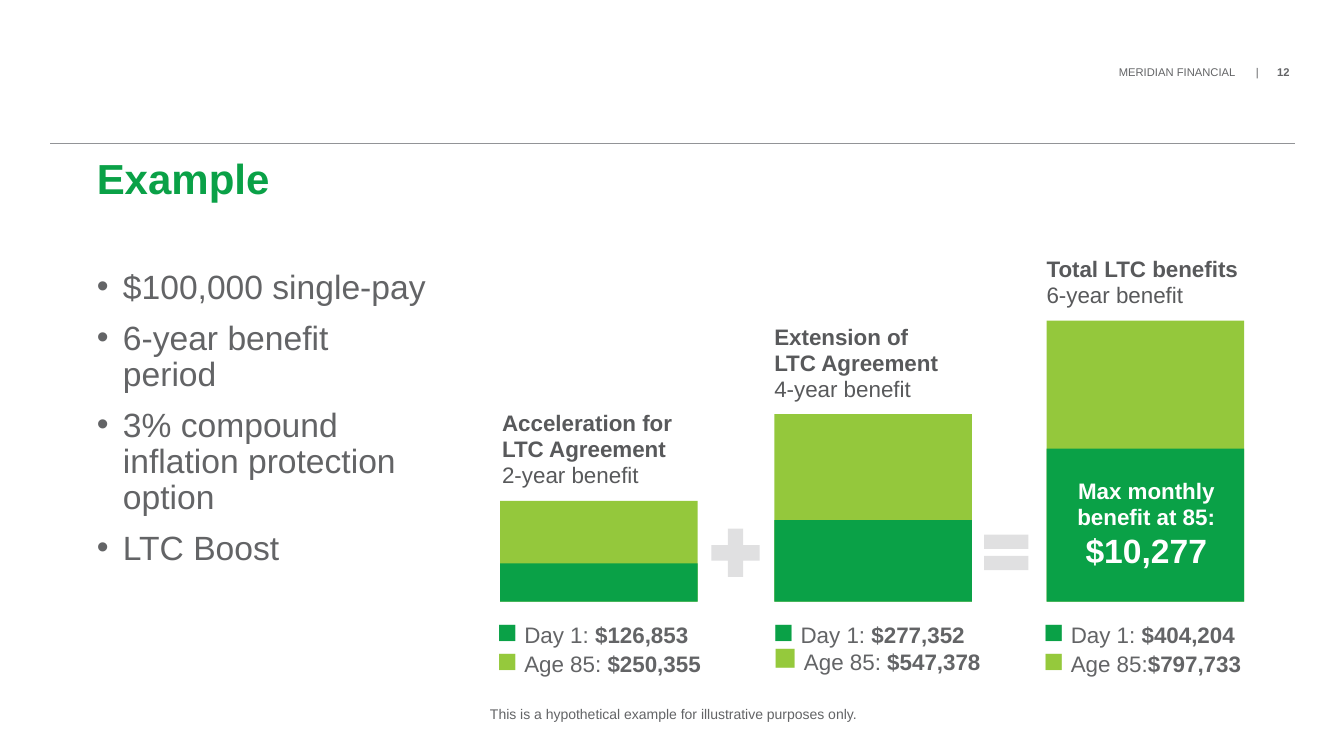
from lxml import etree
from pptx import Presentation
from pptx import util as u
from pptx.dml.color import RGBColor
from pptx.enum import shapes, text
from pptx.oxml.ns import qn

COLORS = {
    "dark": "0AA147", "light": "94C83C", "square": "95C93C", "sign": "E0E0E1",
    "body": "636466", "label": "58595B", "rule": "929497", "white": "FFFFFF",
}
SLIDE_WIDTH, SLIDE_HEIGHT = u.Inches(13.33), u.Inches(7.5)
BAR_WIDTH, BAR_BASE = 14.7, 79.6
BULLETS = ["$100,000 single-pay", "6-year benefit period",
           "3% compound inflation protection option", "LTC Boost"]
BENEFITS = [
    {"left": 37.21, "light": 13.33, "dark": 5.07, "legend": 36.98, "square": 24,
     "name": ["Acceleration for", "LTC Agreement"], "term": "2-year benefit",
     "label": 37.36, "day": "$126,853", "age": ["Age 85: ", "$250,355"]},
    {"left": 57.61, "light": 24.8, "dark": 10.8, "legend": 57.54, "square": 28,
     "name": ["Extension of", "LTC Agreement"], "term": "4-year benefit",
     "label": 57.61, "day": "$277,352", "age": ["Age 85: ", "$547,378"]},
    {"left": 77.87, "light": 37.2, "dark": 20.27, "legend": 77.64, "square": 24,
     "name": ["Total LTC benefits"], "term": "6-year benefit",
     "label": 77.87, "day": "$404,204", "age": ["Age 85:", "$797,733"]},
]


def measure(box):
    """Turn a box in percent of the slide into slide lengths."""
    left, top, width, height = box
    return (int(SLIDE_WIDTH * left / 100), int(SLIDE_HEIGHT * top / 100),
            int(SLIDE_WIDTH * width / 100), int(SLIDE_HEIGHT * height / 100))


def style(font, size=None, color=None, bold=None):
    """Set the face, and any given size, colour and weight."""
    font.name = "Arial"
    if size:
        font.size = u.Pt(size)
    if color:
        font.color.rgb = RGBColor.from_string(COLORS[color])
    if bold is not None:
        font.bold = bold


def prepare(frame):
    """Strip the margins of a text frame and wrap it from the top."""
    frame.margin_left = frame.margin_top = 0
    frame.margin_right = frame.margin_bottom = 0
    frame.auto_size = text.MSO_AUTO_SIZE.NONE
    frame.vertical_anchor = text.MSO_ANCHOR.TOP
    frame.word_wrap = True
    return frame


def add_text(page, box):
    """Add an empty text box and return its frame."""
    return prepare(page.shapes.add_textbox(*measure(box)).text_frame)


def next_paragraph(frame, first, spacing=None):
    """Return the first or a new paragraph with fixed line spacing."""
    para = frame.paragraphs[0] if first else frame.add_paragraph()
    if spacing:
        para.line_spacing = u.Pt(spacing)
    return para


def add_span(para, words, **look):
    """Add a run with its own look."""
    span = para.add_run()
    span.text = words
    style(span.font, **look)


def add_filled(page, kind, box, color):
    """Add a flat preset shape without outline."""
    shape = page.shapes.add_shape(kind, *measure(box))
    shape.shadow.inherit = False
    shape.fill.solid()
    shape.fill.fore_color.rgb = RGBColor.from_string(COLORS[color])
    shape.line.fill.background()


def place(shape, box):
    """Move a placeholder into a box and return its prepared frame."""
    shape.left, shape.top, shape.width, shape.height = measure(box)
    return prepare(shape.text_frame)


def build_header(page, box):
    """Write the company and page number above a thin rule."""
    left, top, width, height = box
    para = add_text(page, (79, top, 16.95, 2)).paragraphs[0]
    para.alignment = text.PP_ALIGN.RIGHT
    properties = para._p.get_or_add_pPr()
    tabs = etree.SubElement(properties, qn("a:tabLst"))
    for stop in (1.36, 1.57):
        etree.SubElement(tabs, qn("a:tab"), pos=str(u.Inches(stop)), algn="l")
    style(para.font, 8, "body")
    add_span(para, "MERIDIAN FINANCIAL\t|\t", size=8, color="body")
    add_span(para, "12", size=8, color="body", bold=True)
    x, y, length, drop = measure(box)
    rule = page.shapes.add_connector(
        shapes.MSO_CONNECTOR.STRAIGHT, x, y + drop, x + length, y + drop)
    rule.line.color.rgb = RGBColor.from_string(COLORS["rule"])
    rule.line.width = u.Pt(0.5)
    etree.SubElement(rule._element.spPr, qn("a:effectLst"))


def build_title(page, box):
    """Fill the title placeholder."""
    para = next_paragraph(place(page.shapes.title, box), True, 31)
    para.text = "Example"
    para.alignment = text.PP_ALIGN.LEFT
    style(para.font, 30, "dark", True)


def build_bullets(page, box):
    """Fill the body placeholder with the policy features."""
    frame = place(page.placeholders[1], box)
    for index, feature in enumerate(BULLETS):
        para = next_paragraph(frame, index == 0, 26)
        para.text = feature
        para.space_before = u.Pt(10 if index else 0)
        properties = para._p.get_or_add_pPr()
        properties.set("marL", str(u.Inches(0.26)))
        properties.set("indent", str(-u.Inches(0.26)))
        etree.SubElement(properties, qn("a:buChar"), char="•")
        style(para.font, 24, "body")


def build_label(page, box, benefit):
    """Write the name and term of a benefit."""
    frame = add_text(page, box)
    for index, (words, bold) in enumerate(
            [("\v".join(benefit["name"]), True), (benefit["term"], False)]):
        para = next_paragraph(frame, index == 0, 18.6)
        para.text = words
        style(para.font, 16, "label", bold)


def build_legend(page, box, benefit):
    """Write the amounts on day 1 and at age 85 beside coloured squares."""
    frame = add_text(page, box)
    rows = [("dark", 24, "Day 1: ", benefit["day"]),
            ("square", benefit["square"], *benefit["age"])]
    for index, (color, size, when, amount) in enumerate(rows):
        para = next_paragraph(frame, index == 0, 20.8 if benefit["square"] == 24 else 20.6)
        style(para.font, 16, "body")
        add_span(para, "■", size=size, color=color)
        add_span(para, " ", size=18)
        add_span(para, when, size=16, color="body")
        add_span(para, amount, size=16, color="body", bold=True)


def build_benefit(page, box, benefit):
    """Draw one two-tone bar with its label above and legend below."""
    left, top, width, height = box
    base = top + height
    for color in ("light", "dark"):
        size = benefit[color]
        add_filled(page, shapes.MSO_SHAPE.RECTANGLE, (left, base - size, width, size), color)
    rise = 3.47 * (len(benefit["name"]) + 1)
    build_label(page, (benefit["label"], top - rise - 1.6, 17.2, rise), benefit)
    build_legend(page, (benefit["legend"], base + 2.53, 19.88, 7.87), benefit)


def build_maximum(page, box):
    """Write the highest monthly benefit over the total bar."""
    frame = add_text(page, box)
    for index, (words, size, spacing) in enumerate(
            [("Max monthly benefit at 85:", 16, 18.6), ("$10,277", 24, None)]):
        para = next_paragraph(frame, index == 0, spacing)
        para.text = words
        para.alignment = text.PP_ALIGN.CENTER
        style(para.font, size, "white", True)


def build_footnote(page, box):
    """Write the disclaimer."""
    para = add_text(page, box).paragraphs[0]
    para.text = "This is a hypothetical example for illustrative purposes only."
    style(para.font, 10, "body")


def main():
    """Build the slide and save it."""
    deck = Presentation()
    deck.slide_width, deck.slide_height = SLIDE_WIDTH, SLIDE_HEIGHT
    page = deck.slides.add_slide(deck.slide_layouts[1])
    build_header(page, (3.75, 8.66, 92.57, 10.27))
    build_title(page, (7.2, 21.07, 44.26, 10.27))
    build_bullets(page, (7.2, 35.73, 24.68, 35.2))
    for benefit in BENEFITS:
        height = benefit["light"]
        build_benefit(page, (benefit["left"], BAR_BASE - height, BAR_WIDTH, height), benefit)
    build_maximum(page, (77.94, 63.2, BAR_WIDTH, 12.53))
    add_filled(page, shapes.MSO_SHAPE.MATH_PLUS, (52.29, 68.8, 4.88, 8.67), "sign")
    add_filled(page, shapes.MSO_SHAPE.MATH_EQUAL, (72.62, 69.07, 4.5, 8), "sign")
    build_footnote(page, (36.46, 93.33, 50.34, 2.4))
    deck.save("out.pptx")


if __name__ == "__main__":
    main()
